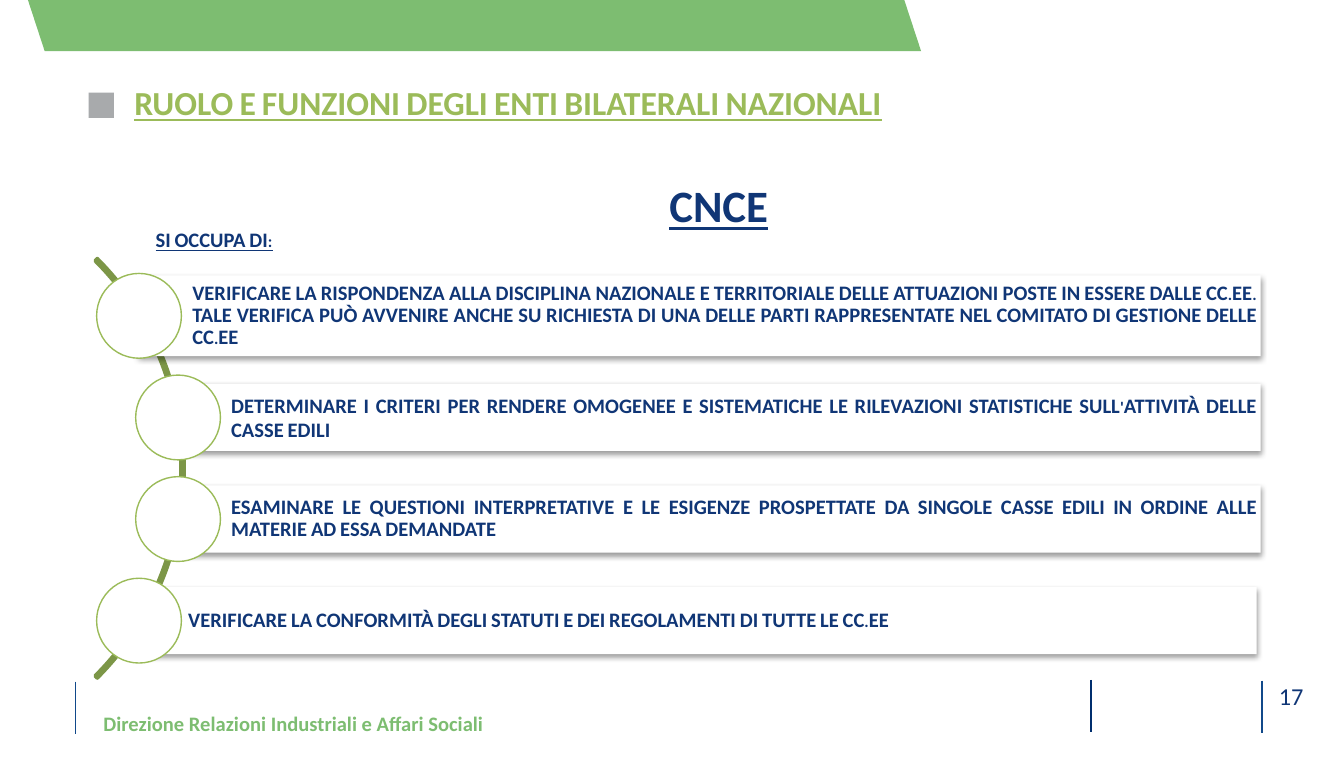
from lxml import etree
from pptx import Presentation
from pptx.dml.color import RGBColor
from pptx.enum.shapes import MSO_CONNECTOR, MSO_SHAPE
from pptx.enum.text import MSO_ANCHOR, PP_ALIGN
from pptx.oxml.ns import qn
from pptx.util import Pt

RECTANGLE, OVAL, BLOCK_ARC = MSO_SHAPE.RECTANGLE, MSO_SHAPE.OVAL, MSO_SHAPE.BLOCK_ARC
STRAIGHT = MSO_CONNECTOR.STRAIGHT
TOP, MIDDLE, BOTTOM = MSO_ANCHOR.TOP, MSO_ANCHOR.MIDDLE, MSO_ANCHOR.BOTTOM
LEFT, CENTER, JUSTIFY = PP_ALIGN.LEFT, PP_ALIGN.CENTER, PP_ALIGN.JUSTIFY

WHITE, NAVY, GREEN, LIME = "FFFFFF", "103676", "7DBD71", "9BBB59"
OLIVE, GREY, BLUE, DARK_BLUE = "7C9647", "939598", "11498A", "002E6E"
STANDARD_INSETS = (7.2, 3.6, 7.2, 3.6)

# text, indented along the arc, bar height, right edge, alignment, line spacing
TASKS = [
    ("VERIFICARE LA RISPONDENZA ALLA DISCIPLINA NAZIONALE E TERRITORIALE DELLE "
     "ATTUAZIONI POSTE IN ESSERE DALLE CC.EE. TALE VERIFICA PUÒ AVVENIRE ANCHE SU "
     "RICHIESTA DI UNA DELLE PARTI RAPPRESENTATE NEL COMITATO DI GESTIONE DELLE CC.EE",
     74.2, 51.8, 43.2, 675.4, JUSTIFY, 0.9),
    ("DETERMINARE I CRITERI PER RENDERE OMOGENEE E SISTEMATICHE LE RILEVAZIONI "
     "STATISTICHE SULL'ATTIVITÀ DELLE CASSE EDILI",
     95, 72.7, 36, 675.4, JUSTIFY, 1.0),
    ("ESAMINARE LE QUESTIONI INTERPRETATIVE E LE ESIGENZE PROSPETTATE DA SINGOLE "
     "CASSE EDILI IN ORDINE ALLE MATERIE AD ESSA DEMANDATE",
     95, 72.7, 36, 675.4, JUSTIFY, 0.9),
    ("VERIFICARE LA CONFORMITÀ DEGLI STATUTI E DEI REGOLAMENTI DI TUTTE LE CC.EE",
     72, 51.8, 36, 673.2, LEFT, 0.9),
]


def color(value):
    return RGBColor.from_string(value)


def add_filled(slide, kind, box, fill=None, line=None, line_width=0.75):
    shape = slide.shapes.add_shape(kind, *map(Pt, box))
    shape.shadow.inherit = False
    if fill:
        shape.fill.solid()
        shape.fill.fore_color.rgb = color(fill)
    else:
        shape.fill.background()
    if line:
        shape.line.color.rgb = color(line)
        shape.line.width = Pt(line_width)
    else:
        shape.line.fill.background()
    return shape


def set_transparency(shape, opacity):
    rgb = shape.fill._xPr.find(".//" + qn("a:srgbClr"))
    etree.SubElement(rgb, qn("a:alpha"), val=str(opacity * 1000))


def add_drop_shadow(shape):
    effects = shape._element.spPr.find(qn("a:effectLst"))
    shadow = etree.SubElement(effects, qn("a:outerShdw"), blurRad=str(Pt(3.1)),
                              dist=str(Pt(1.6)), dir="5400000", rotWithShape="0")
    rgb = etree.SubElement(shadow, qn("a:srgbClr"), val="000000")
    etree.SubElement(rgb, qn("a:alpha"), val="38000")


def write_text(shape, text, size, text_color, bold=True, underline=False, small_caps=True,
               align=LEFT, anchor=TOP, insets=(0, 0, 0, 0), line_spacing=None):
    frame = shape.text_frame
    frame.text = text
    frame.word_wrap = True
    frame.vertical_anchor = anchor
    (frame.margin_left, frame.margin_top,
     frame.margin_right, frame.margin_bottom) = map(Pt, insets)
    paragraph = frame.paragraphs[0]
    paragraph.alignment = align
    paragraph.line_spacing = line_spacing
    run = paragraph.runs[0]
    run.font.name = "Calibri"
    run.font.size = Pt(size)
    run.font.bold = bold
    run.font.underline = underline
    run.font.color.rgb = color(text_color)
    if small_caps:
        run._r.get_or_add_rPr().set("cap", "small")


def add_text(slide, box, text, size, text_color, **style):
    write_text(slide.shapes.add_textbox(*map(Pt, box)), text, size, text_color, **style)


def add_divider(slide, x, top, height, line_color):
    line = slide.shapes.add_connector(STRAIGHT, Pt(x), Pt(top), Pt(x), Pt(top + height))
    line.line.color.rgb = color(line_color)
    line.line.width = Pt(1)
    etree.SubElement(line._element.spPr, qn("a:effectLst"))


def add_header_band(slide, left, top, width, height):
    slant = 9
    builder = slide.shapes.build_freeform(Pt(left), Pt(top))
    builder.add_line_segments([(Pt(left + slant), Pt(top + height)),
                               (Pt(left + width), Pt(top + height)),
                               (Pt(left + width - slant), Pt(top))])
    band = builder.convert_to_shape()
    band.shadow.inherit = False
    band.fill.solid()
    band.fill.fore_color.rgb = color(GREEN)
    band.line.fill.background()


def add_heading(slide, left, top, width, height):
    marker = add_filled(slide, RECTANGLE, (left, top + 5.8, 13.5, 13.5), GREY)
    set_transparency(marker, 80)
    add_text(slide, (left + 24.5, top, width - 24.5, height),
             "RUOLO E FUNZIONI DEGLI ENTI BILATERALI NAZIONALI", 18, LIME, underline=True)


def add_subject(slide, left, top, width, height):
    add_text(slide, (left, top, width, height), "CNCE", 24, NAVY, underline=True,
             align=CENTER, insets=(59, 3.6, 7.2, 3.6), line_spacing=Pt(54.7))
    add_text(slide, (left + 28.8, top + 52.6, 180, 20.9), "SI OCCUPA DI:", 11, NAVY,
             underline=True, insets=STANDARD_INSETS)


def add_task_list(slide, left, top, size):
    """Arc of the given diameter, with circles and bars at equal steps down it."""
    arc = add_filled(slide, BLOCK_ARC, (left, top, size, size), line=OLIVE, line_width=2)
    arc.adjustments[0], arc.adjustments[1], arc.adjustments[2] = 189, 27, 0.005
    diameter, step = 45.4, 54.4
    first_center = top + size / 2 - 1.5 * step
    for row, task in enumerate(TASKS):
        text, bar_left, circle_left, height, right, align, spacing = task
        center = first_center + row * step
        bar = add_filled(slide, RECTANGLE,
                         (bar_left, center - height / 2, right - bar_left, height), WHITE)
        add_drop_shadow(bar)
        write_text(bar, text, 11, NAVY, align=align, anchor=MIDDLE,
                   insets=(28.8, 2.2, 2.2, 2.2), line_spacing=spacing)
        add_filled(slide, OVAL, (circle_left, center - diameter / 2, diameter, diameter),
                   WHITE, LIME)


def add_footer(slide, left, top, width, height):
    add_divider(slide, left, top + 1, height, BLUE)
    add_divider(slide, left + 544, top, height, DARK_BLUE)
    add_divider(slide, left + width, top + 0.5, height, BLUE)
    add_text(slide, (left + 14.4, top + 1, 318, 29), "Direzione Relazioni Industriali e Affari Sociali",
             11, GREEN, small_caps=False, anchor=BOTTOM, insets=(0.5, 0, 0, 0))
    add_text(slide, (left + width + 2, top + 1, 27.4, 17.3), "17", 13, NAVY,
             bold=False, small_caps=False, align=CENTER)


def main():
    presentation = Presentation()
    presentation.slide_width, presentation.slide_height = Pt(720), Pt(405.36)
    slide = presentation.slides.add_slide(presentation.slide_layouts[6])
    add_header_band(slide, 15, 0, 478.5, 27.4)
    add_heading(slide, 47.5, 43.9, 552.3, 21.6)
    add_subject(slide, 47.5, 65.5, 570.2, 35.3)
    add_task_list(slide, -218.9, 92, 317.5)
    add_footer(slide, 40.5, 364, 635.5, 28)
    presentation.save("out.pptx")


if __name__ == "__main__":
    main()
